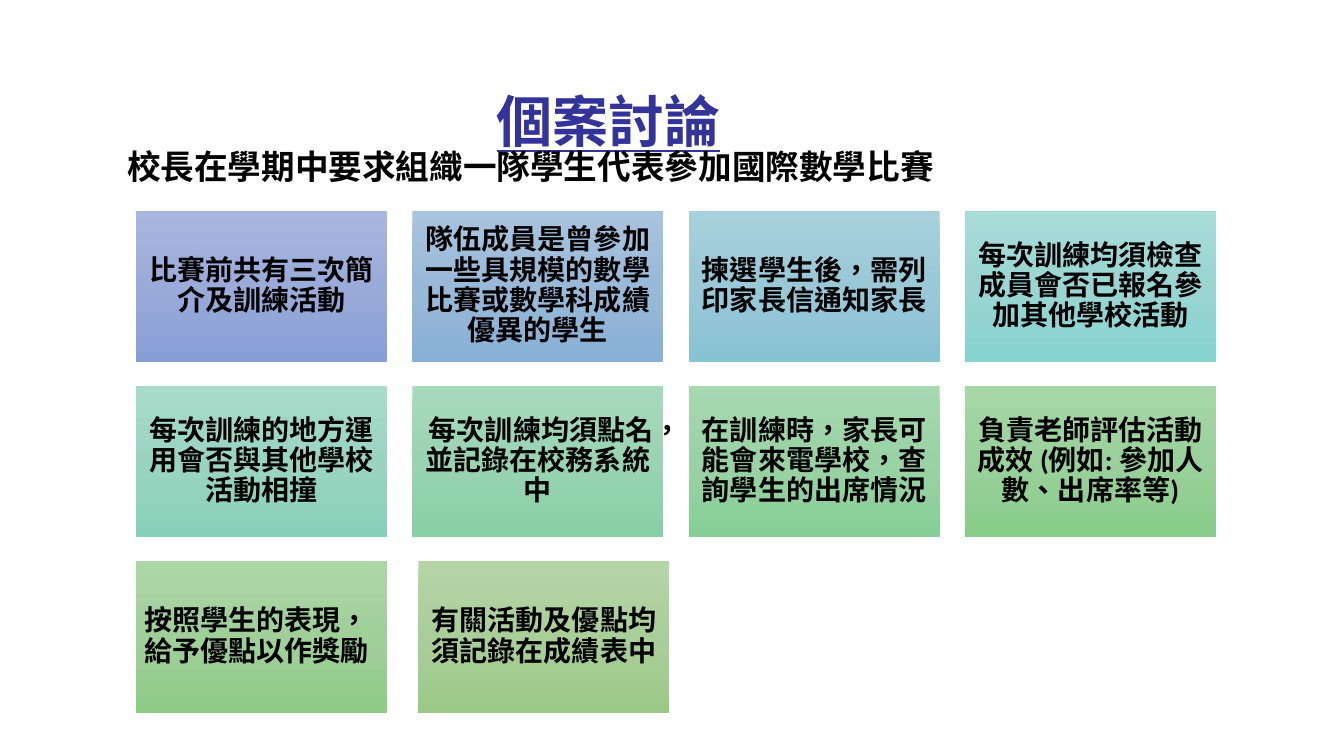
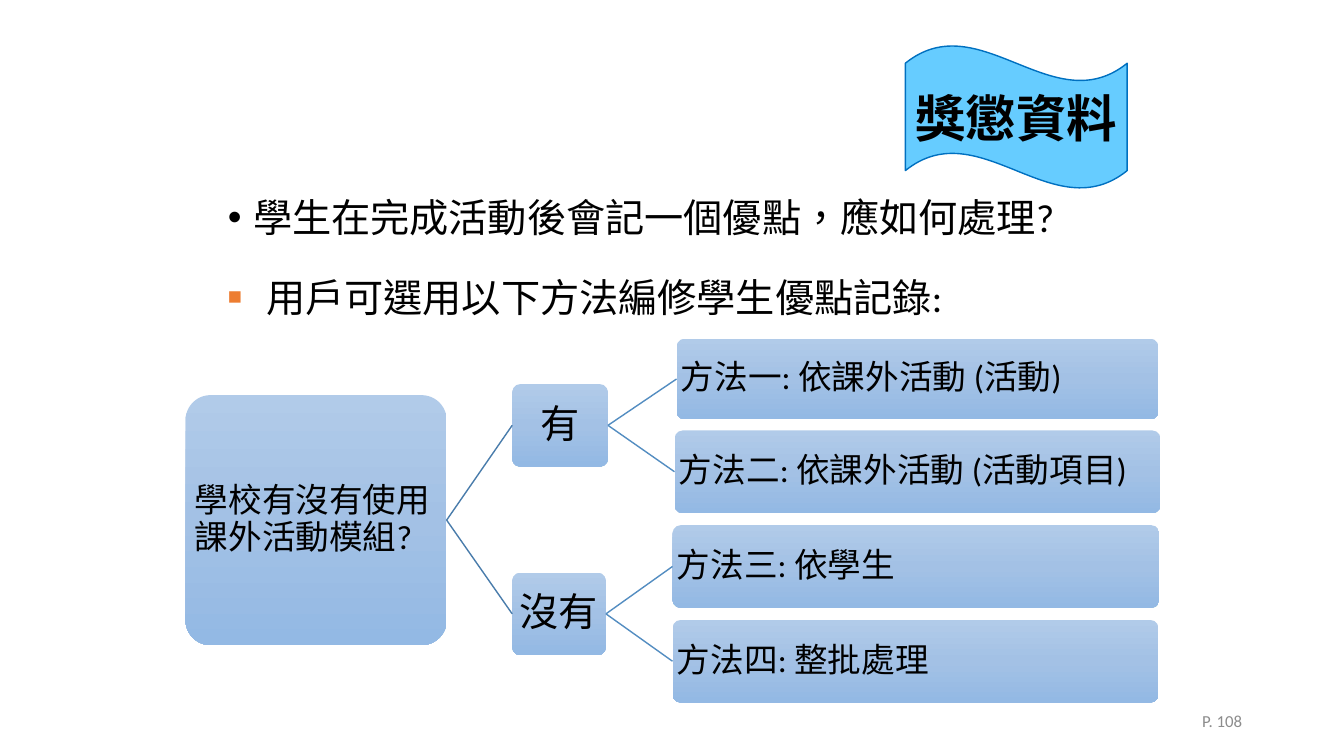
from copy import deepcopy

from lxml import etree
from pptx import Presentation
from pptx.dml.color import RGBColor
from pptx.enum.lang import MSO_LANGUAGE_ID as Language
from pptx.enum.shapes import MSO_CONNECTOR as Connector, MSO_SHAPE as Shape
from pptx.enum.text import MSO_ANCHOR as Anchor, MSO_AUTO_SIZE as AutoSize, PP_ALIGN as Align
from pptx.oxml.ns import qn
from pptx.util import Inches, Pt

BLACK = "000000"
TITLE_COLOUR = "333399"
BRANCH_COLOUR, LEAF_LINE_COLOUR = "497CAB", "538DC1"
TREE_GRADIENT = ("B1CBE9", "A3C1E5", "93B9E4")

CASE_TITLE = "個案討論"
CASE_REQUEST = "校長在學期中要求組織一隊學生代表參加國際數學比賽"

# text, gradient from top to bottom, settings that differ from the other tiles
TILES = [
    ("比賽前共有三次簡介及訓練活動", ("A8B7DF", "9AABD9", "889ED7"), {}),
    ("隊伍成員是曾參加一些具規模的數學比賽或數學科成績優異的學生",
     ("A8C3DE", "9AB9D8", "88B0D6"), {}),
    ("揀選學生後，需列印家長信通知家長", ("A8D0DD", "9AC8D7", "88C3D4"), {}),
    ("每次訓練均須檢查成員會否已報名參加其他學校活動",
     ("A8DCD9", "9AD5D2", "87D3CF"), {}),
    ("每次訓練的地方運用會否與其他學校活動相撞", ("A8DBCA", "9AD4C1", "87D1B9"), {}),
    (" 每次訓練均須點名，並記錄在校務系統中",
     ("A7DABC", "9AD3B2", "87D0A6"), {"font": "Arial"}),
    ("在訓練時，家長可能會來電學校，查詢學生的出席情況",
     ("A7D8B1", "9AD2A5", "87CE96"), {}),
    ("負責老師評估活動成效 (例如: 參加人數、出席率等)",
     ("A7D7A9", "9AD09B", "87CD89"), {}),
    ("按照學生的表現，給予優點以作獎勵",
     ("ADD6A7", "A0CF9A", "8FCB87"), {"align": Align.LEFT}),
    ("有關活動及優點均須記錄在成績表中",
     ("B5D5A7", "AACE9A", "9CC987"), {"shift": 0.06}),
]
TILE_COLUMNS = 4
TILE_LEFT, TILE_TOP = 1.35, 2.09
TILE_WIDTH, TILE_HEIGHT = 2.49, 1.5
TILE_STEP_X, TILE_STEP_Y = 2.74, 1.74

REWARD_BANNER = "獎懲資料"
PAGE_LABEL = "P. 108"
# text, bullet, bullet colour, bullet size in percent, indent, line spacing, space before
REWARD_POINTS = [
    ("學生在完成活動後會記一個優點，應如何處理?", "•", BLACK, 100, 0.25, 0.9, 0),
    ("用戶可選用以下方法編修學生優點記錄:", "■", "ED7D31", 60, 0.38, 1.0, 23),
]
QUESTION = ("學校有沒有使用課外活動模組?", (1.84, 3.92, 2.59, 2.48))
ANSWERS = [
    ("有", (5.08, 3.81, 0.95, 0.82), [
        ("方法一: 依課外活動 (活動)", (6.71, 3.36, 4.78, 0.8)),
        ("方法二: 依課外活動 (活動項目)", (6.69, 4.27, 4.82, 0.82)),
    ]),
    ("沒有", (5.08, 5.68, 0.93, 0.82), [
        ("方法三: 依學生", (6.67, 5.21, 4.83, 0.82)),
        ("方法四: 整批處理", (6.67, 6.15, 4.82, 0.82)),
    ]),
]


def rgb(colour):
    return RGBColor.from_string(colour)


def place(shape, box):
    shape.left, shape.top, shape.width, shape.height = (Inches(n) for n in box)


def style_runs(paragraph, size, colour=BLACK, font="Calibri", bold=False, underline=False):
    for run in paragraph.runs:
        run.font.name, run.font.size = font, Pt(size)
        run.font.bold, run.font.underline = bold, underline
        run.font.color.rgb = rgb(colour)
        run.font.language_id = Language.TRADITIONAL_CHINESE


def set_text(shape, text, size, align=Align.CENTER, anchor=Anchor.MIDDLE,
             insets=(0.1, 0.05), spacing=1.0, wrap=True, **style):
    frame = shape.text_frame
    frame.text = text
    frame.word_wrap, frame.vertical_anchor = wrap, anchor
    frame.auto_size = AutoSize.NONE
    frame.margin_left = frame.margin_right = Inches(insets[0])
    frame.margin_top = frame.margin_bottom = Inches(insets[1])
    paragraph = frame.paragraphs[0]
    paragraph.alignment, paragraph.line_spacing = align, spacing
    style_runs(paragraph, size, **style)


def add_text_box(slide, box, text, size, **settings):
    set_text(slide.shapes.add_textbox(*(Inches(n) for n in box)), text, size, **settings)


def add_panel(slide, kind, box, gradient):
    """Add a borderless shape with a three-colour gradient running downwards."""
    shape = slide.shapes.add_shape(kind, *(Inches(n) for n in box))
    shape.shadow.inherit = False
    shape.line.fill.background()
    shape.fill.gradient()
    shape.fill.gradient_angle = 270
    stop_list = shape._element.spPr.find(qn("a:gradFill")).find(qn("a:gsLst"))
    stop_list.append(deepcopy(stop_list[0]))
    for stop, colour, position in zip(shape.fill.gradient_stops, gradient, (0, 0.5, 1)):
        stop.color.rgb = rgb(colour)
        stop.position = position
    return shape


def add_node(slide, text, box, size, align=Align.LEFT):
    node = add_panel(slide, Shape.ROUNDED_RECTANGLE, box, TREE_GRADIENT)
    node.adjustments[0] = 0.1
    set_text(node, text, size, align=align, insets=(0.02, 0.02), spacing=0.9)
    return node


def link(slide, parent, child, colour):
    """Join the right side of the parent to the left side of the child."""
    connector = slide.shapes.add_connector(Connector.STRAIGHT, 0, 0, 0, 0)
    connector.begin_connect(parent, 3)
    connector.end_connect(child, 1)
    connector.line.color.rgb = rgb(colour)
    connector.line.width = Pt(1)
    etree.SubElement(connector._element.spPr, qn("a:effectLst"))


def set_bullet(paragraph, character, colour, percent, indent):
    properties = paragraph._p.get_or_add_pPr()
    properties.set("marL", str(Inches(indent)))
    properties.set("indent", str(-Inches(indent)))
    bullet_colour = etree.SubElement(properties, qn("a:buClr"))
    etree.SubElement(bullet_colour, qn("a:srgbClr"), val=colour)
    etree.SubElement(properties, qn("a:buSzPct"), val=str(percent * 1000))
    etree.SubElement(properties, qn("a:buFont"), typeface="Arial")
    etree.SubElement(properties, qn("a:buChar"), char=character)


def build_case_slide(presentation):
    slide = presentation.slides.add_slide(presentation.slide_layouts[5])
    title = slide.shapes.title
    place(title, (1.23, 0.81, 9.61, 0.77))
    set_text(title, CASE_TITLE, 40, anchor=Anchor.TOP, colour=TITLE_COLOUR,
             font="Lato", bold=True, underline=True)
    add_text_box(slide, (0, 1.4, 10.52, 0.5), CASE_REQUEST, 24, anchor=Anchor.TOP, bold=True)

    for index, (text, gradient, settings) in enumerate(TILES):
        row, column = divmod(index, TILE_COLUMNS)
        left = TILE_LEFT + column * TILE_STEP_X + settings.get("shift", 0)
        top = TILE_TOP + row * TILE_STEP_Y
        tile = add_panel(slide, Shape.RECTANGLE, (left, top, TILE_WIDTH, TILE_HEIGHT), gradient)
        set_text(tile, text, 20, align=settings.get("align", Align.CENTER),
                 insets=(0.08, 0.08), spacing=0.9, bold=True,
                 font=settings.get("font", "Calibri"))


def build_reward_slide(presentation):
    slide = presentation.slides.add_slide(presentation.slide_layouts[1])
    heading = slide.shapes.title._element
    heading.getparent().remove(heading)

    body = slide.placeholders[1]
    place(body, (2.16, 1.92, 9.02, 1.4))
    frame = body.text_frame
    frame.text = "\n".join(point[0] for point in REWARD_POINTS)
    frame.auto_size, frame.vertical_anchor = AutoSize.NONE, Anchor.TOP
    for paragraph, point in zip(frame.paragraphs, REWARD_POINTS):
        _, character, colour, percent, indent, spacing, before = point
        set_bullet(paragraph, character, colour, percent, indent)
        paragraph.line_spacing, paragraph.space_before = spacing, Pt(before)
        style_runs(paragraph, 28)

    banner = slide.shapes.add_shape(Shape.WAVE, *(Inches(n) for n in (8.98, 0.45, 2.2, 1.42)))
    banner.shadow.inherit = False
    banner.fill.solid()
    banner.fill.fore_color.rgb = rgb("66CCFF")
    banner.line.color.rgb = rgb("0070C0")
    banner.line.width = Pt(1)
    set_text(banner, REWARD_BANNER, 36, insets=(0.05, 0.05), wrap=False, bold=True)

    question = add_node(slide, *QUESTION, 24)
    for answer_text, answer_box, methods in ANSWERS:
        answer = add_node(slide, answer_text, answer_box, 28, Align.CENTER)
        link(slide, question, answer, BRANCH_COLOUR)
        for method_text, method_box in methods:
            method = add_node(slide, method_text, method_box, 24)
            link(slide, answer, method, LEAF_LINE_COLOUR)

    add_text_box(slide, (9.42, 6.95, 3, 0.4), PAGE_LABEL, 12, align=Align.RIGHT, colour="8C8C8C")


def main():
    presentation = Presentation()
    presentation.slide_width, presentation.slide_height = Inches(13.33), Inches(7.5)
    build_case_slide(presentation)
    build_reward_slide(presentation)
    presentation.save("out.pptx")


if __name__ == "__main__":
    main()
